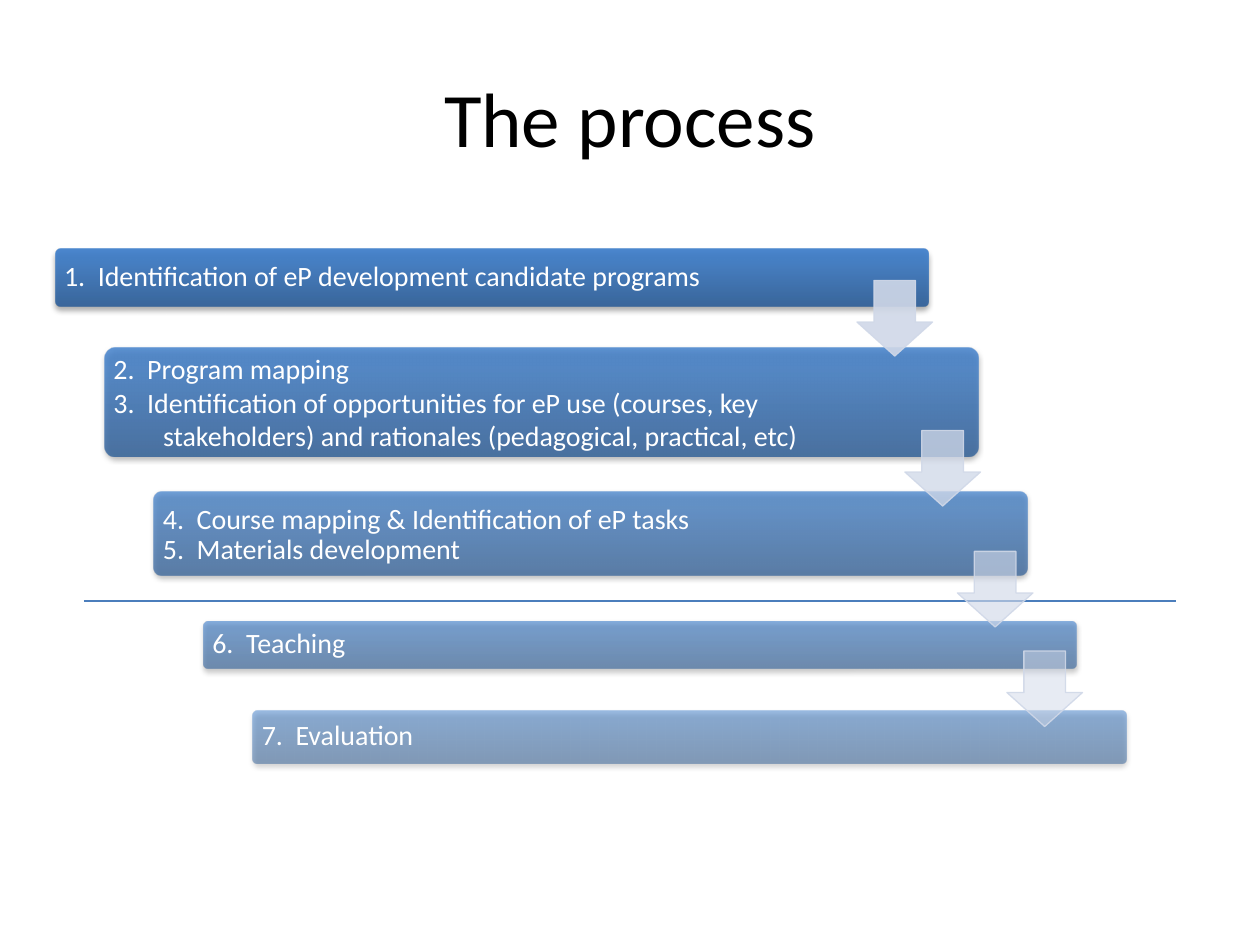
"""Build a slide with the staggered steps of a development process."""
from lxml.etree import SubElement
from pptx import Presentation
from pptx.dml.color import RGBColor
from pptx.enum.shapes import MSO_CONNECTOR, MSO_SHAPE
from pptx.enum.text import MSO_ANCHOR, PP_ALIGN
from pptx.oxml import parse_xml
from pptx.oxml.ns import nsdecls, qn
from pptx.util import Pt

COLORS = {
    "title": "000000", "text": "FFFFFF", "rule": "4B7EBC", "arrow": "D0D8E8",
    "dark": "2F5F99", "mid": "3D7CC7", "light": "3A7CCB", "shadow": "000000",
}
FRAME_FORMAT = {
    "word_wrap": True, "vertical_anchor": MSO_ANCHOR.MIDDLE,
    "margin_left": Pt(5), "margin_right": Pt(5),
    "margin_top": Pt(5), "margin_bottom": Pt(5),
}
STEP_FONT = {"name": "Calibri", "size": Pt(16)}
TITLE_FONT = {"name": "Calibri", "size": Pt(44)}
TIGHT = {"line_spacing": 0.9}
PLAIN = {"line_spacing": 1.0}
STEPS = [
    (142.4, 32.8, 423.4, 90, [
        ("1.  Identification of eP development candidate programs", TIGHT)]),
    (198.8, 62, 418.3, 80, [
        ("2.  Program mapping", PLAIN),
        ("3.  Identification of opportunities for eP use (courses, key "
         "stakeholders) and rationales (pedagogical, practical, etc)", PLAIN)]),
    (280.7, 48, 418.3, 70, [
        ("4.  Course mapping & Identification of eP tasks", PLAIN),
        ("5.  Materials development", TIGHT)]),
    (355, 27, 418.3, 60, [("6.  Teaching", TIGHT)]),
    (405.9, 30.2, 418.3, 50, [("7.  Evaluation", TIGHT)]),
]
ARROWS = [(489.7, 160.3, 90), (517.1, 246, 77), (547.1, 315.1, 63), (575.4, 372, 50)]


def add_shadow(properties, blur, distance, opacity):
    properties.append(parse_xml(
        f'<a:effectLst {nsdecls("a")}><a:outerShdw blurRad="{Pt(blur)}" '
        f'dist="{Pt(distance)}" dir="5400000" rotWithShape="0">'
        f'<a:srgbClr val="{COLORS["shadow"]}"><a:alpha val="{opacity * 1000}"/>'
        '</a:srgbClr></a:outerShdw></a:effectLst>'))


def style_font(font, values, color):
    for attribute, value in values.items():
        setattr(font, attribute, value)
    font.color.rgb = RGBColor.from_string(COLORS[color])


deck = Presentation()
deck.slide_width, deck.slide_height = Pt(720), Pt(540)
slide = deck.slides.add_slide(deck.slide_layouts[5])
shapes = slide.shapes

heading = shapes.title
heading.left, heading.top, heading.width, heading.height = Pt(36), Pt(21.6), Pt(648), Pt(90)
heading.text_frame.text = "The process"
heading.text_frame.vertical_anchor = MSO_ANCHOR.MIDDLE
heading.text_frame.paragraphs[0].alignment = PP_ALIGN.CENTER
style_font(heading.text_frame.paragraphs[0].runs[0].font, TITLE_FONT, "title")

divider = shapes.add_connector(MSO_CONNECTOR.STRAIGHT, Pt(48), Pt(343.5), Pt(672), Pt(343.5))
divider.line.color.rgb = RGBColor.from_string(COLORS["rule"])
divider.line.width = Pt(0.75)
add_shadow(divider._element.spPr, 4, 3, 40)

for index, (top, height, text_width, opacity, items) in enumerate(STEPS):
    left = 31.6 + 28.25 * index
    bar = shapes.add_shape(MSO_SHAPE.ROUNDED_RECTANGLE, Pt(left), Pt(top), Pt(499), Pt(height))
    bar.adjustments[0] = 0.1
    bar.line.fill.background()
    stops = "".join(
        f'<a:gs pos="{position * 1000}"><a:srgbClr val="{COLORS[shade]}">'
        f'<a:alpha val="{opacity * 1000}"/></a:srgbClr></a:gs>'
        for position, shade in [(0, "dark"), (80, "mid"), (100, "light")])
    bar._element.spPr.find(qn("a:prstGeom")).addnext(parse_xml(
        f'<a:gradFill {nsdecls("a")} rotWithShape="1"><a:gsLst>{stops}</a:gsLst>'
        '<a:lin ang="16200000" scaled="0"/></a:gradFill>'))
    add_shadow(bar._element.spPr, 3.1, 1.8, 35)

    label = shapes.add_textbox(Pt(left), Pt(top), Pt(text_width), Pt(height))
    frame = label.text_frame
    for attribute, value in FRAME_FORMAT.items():
        setattr(frame, attribute, value)
    frame.text = "\n".join(wording for wording, _ in items)
    for paragraph, (_, spacing) in zip(frame.paragraphs, items):
        for attribute, value in spacing.items():
            setattr(paragraph, attribute, value)
        style_font(paragraph.runs[0].font, STEP_FONT, "text")
        if index == 1:
            indents = paragraph._p.get_or_add_pPr()
            indents.set("marL", str(Pt(28.35)))
            indents.set("indent", str(Pt(-28.35)))

for left, top, opacity in ARROWS:
    arrow = shapes.add_shape(MSO_SHAPE.DOWN_ARROW, Pt(left), Pt(top), Pt(43.2), Pt(43.2))
    arrow.adjustments[0], arrow.adjustments[1] = 0.55, 0.45
    arrow.shadow.inherit = False
    arrow.fill.solid()
    arrow.fill.fore_color.rgb = RGBColor.from_string(COLORS["arrow"])
    arrow.line.color.rgb = RGBColor.from_string(COLORS["arrow"])
    arrow.line.width = Pt(0.75)
    tints = arrow._element.spPr.iter(qn("a:srgbClr"))
    for tint, alpha in zip(list(tints), (opacity, 90)):
        SubElement(tint, qn("a:alpha")).set("val", str(alpha * 1000))

deck.save("out.pptx")
